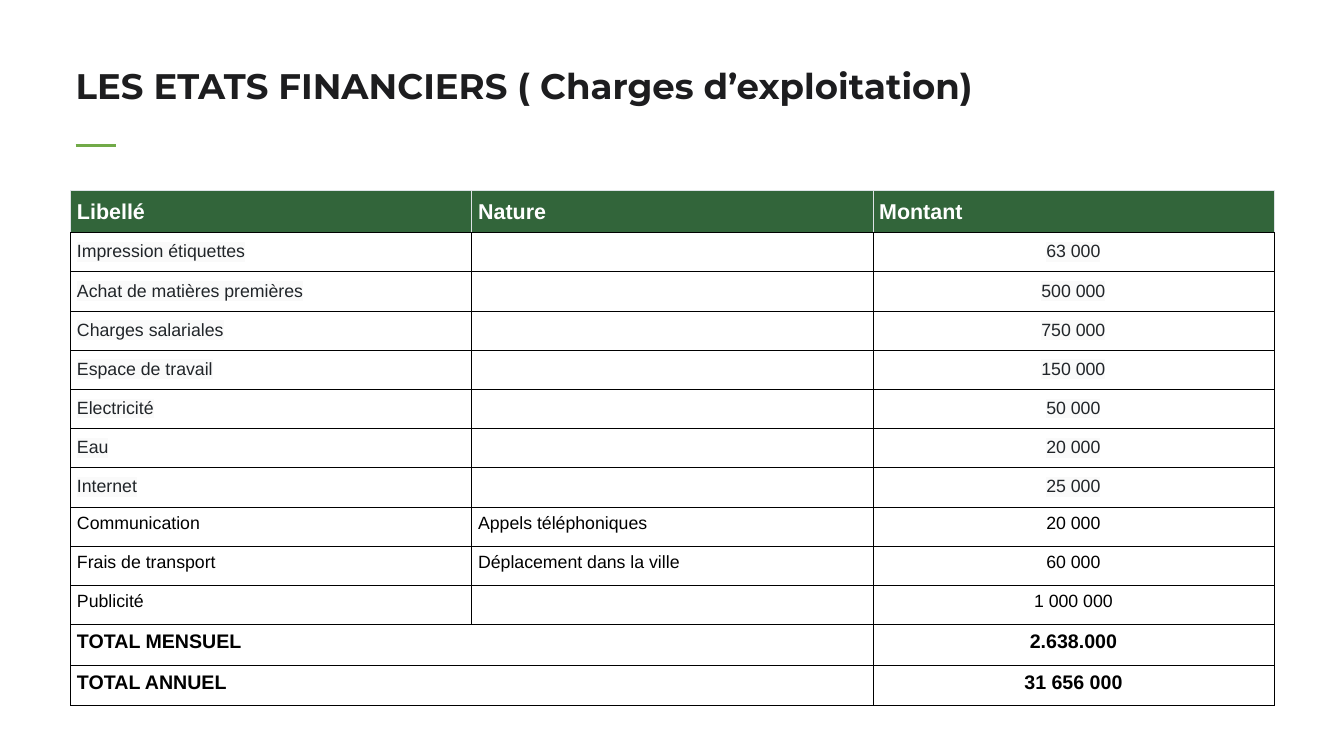
import pptx
import pptx.dml.color
import pptx.enum.shapes
import pptx.enum.text
import pptx.oxml
import pptx.oxml.ns
import pptx.util
from lxml import etree

PX = 9525  # EMU in one px, for a slide of 1920 by 1080 px
GREEN, BLACK, GRAY, INK = "32653A", "000000", "DEE2E6", "212529"
HEADINGS = ("Libellé", "Nature", "Montant")
CHARGES = (
    ("Impression étiquettes", "", "63 000"),
    ("Achat de matières premières", "", "500 000"),
    ("Charges salariales", "", "750 000"),
    ("Espace de travail", "", "150 000"),
    ("Electricité", "", "50 000"),
    ("Eau", "", "20 000"),
    ("Internet", "", "25 000"),
)
OTHER_CHARGES = (
    ("Communication", "Appels téléphoniques", "20 000"),
    ("Frais de transport", "Déplacement dans la ville", "60 000"),
    ("Publicité", "", "1 000 000"),
)
TOTALS = (("TOTAL MENSUEL", "", "2.638.000"), ("TOTAL ANNUEL", "", "31 656 000"))

# Each group: rows, row height, text style
GROUPS = (
    ((HEADINGS,), 59, dict(size=23, color="FFFFFF", bold=True, spacing=1.15, highlight=GREEN)),
    (CHARGES, 56, dict(size=19, color=INK, spacing=1.15, highlight="FAFAFA")),
    (OTHER_CHARGES, 56, dict(size=19, color=BLACK)),
    (TOTALS, 58, dict(size=21, color=BLACK, bold=True)),
)


def px(length):
    return pptx.util.Emu(length * PX)


def rgb(color):
    return pptx.dml.color.RGBColor.from_string(color)


def sub(parent, tag, **attributes):
    return etree.SubElement(parent, pptx.oxml.ns.qn(tag), attributes)


def write(paragraph, text, size, color, font="Arial", bold=False, spacing=None, highlight=None):
    if spacing:
        paragraph.line_spacing = spacing
    run = paragraph.add_run()
    run.text = text
    run.font.size = pptx.util.Pt(size)
    run.font.bold = bold
    run.font.color.rgb = rgb(color)
    if highlight:
        sub(sub(run.font._element, "a:highlight"), "a:srgbClr", val=highlight)
    run.font.name = font


def set_borders(cell, sides, bottom):
    """Draw the left, right and top edges in one colour and the bottom in another."""
    properties = cell._tc.get_or_add_tcPr()
    colors = {"a:lnL": sides, "a:lnR": sides, "a:lnT": sides, "a:lnB": bottom}
    for position, (tag, color) in enumerate(colors.items()):
        edge = sub(properties, tag, w=str(pptx.util.Pt(0.75)))
        sub(sub(edge, "a:solidFill"), "a:srgbClr", val=color)
        properties.insert(position, edge)


def add_title(slide, text):
    box = slide.shapes.add_textbox(px(108), px(85), px(1756), px(61))
    frame = box.text_frame
    frame.word_wrap = True
    frame.auto_size = pptx.enum.text.MSO_AUTO_SIZE.SHAPE_TO_FIT_TEXT
    frame.margin_left = frame.margin_right = frame.margin_top = frame.margin_bottom = 0
    write(frame.paragraphs[0], text, 38, "1D1D1F", "Montserrat", bold=True, spacing=1.1)


def add_accent(slide):
    accent = slide.shapes.add_connector(
        pptx.enum.shapes.MSO_CONNECTOR.STRAIGHT, px(108), px(208), px(166), px(208))
    accent.line.color.rgb = rgb("71AA48")
    accent.line.width = pptx.util.Pt(3.75)
    sub(accent._element.spPr, "a:effectLst")


def fill_cell(cell, text, style, is_heading, is_amount):
    cell.margin_left = cell.margin_right = cell.margin_top = cell.margin_bottom = px(9)
    if is_heading:
        cell.fill.solid()
        cell.fill.fore_color.rgb = rgb(GREEN)
    else:
        cell.fill.background()
    set_borders(cell, GRAY if is_heading else BLACK, BLACK)
    if text:
        paragraph = cell.text_frame.paragraphs[0]
        if is_amount and not is_heading:
            paragraph.alignment = pptx.enum.text.PP_ALIGN.CENTER
        write(paragraph, text, **style)


def add_charges_table(slide):
    rows = [(row, height, style) for group, height, style in GROUPS for row in group]
    total_height = sum(height for _, height, _ in rows)
    table = slide.shapes.add_table(
        len(rows), len(HEADINGS), px(101), px(272), px(573 * 3), px(total_height)).table
    table.horz_banding = False
    for column in table.columns:
        column.width = px(573)
    for r, (row, height, style) in enumerate(rows):
        table.rows[r].height = px(height)
        for c, text in enumerate(row):
            fill_cell(table.cell(r, c), text, style, r == 0, c == 2)
        if row in TOTALS:
            table.cell(r, 0).merge(table.cell(r, 1))


def main():
    deck = pptx.Presentation()
    deck.slide_width, deck.slide_height = px(1920), px(1080)
    slide = deck.slides.add_slide(deck.slide_layouts[6])
    add_accent(slide)
    add_title(slide, "LES ETATS FINANCIERS ( Charges d’exploitation)")
    add_charges_table(slide)
    deck.save("out.pptx")


if __name__ == "__main__":
    main()
